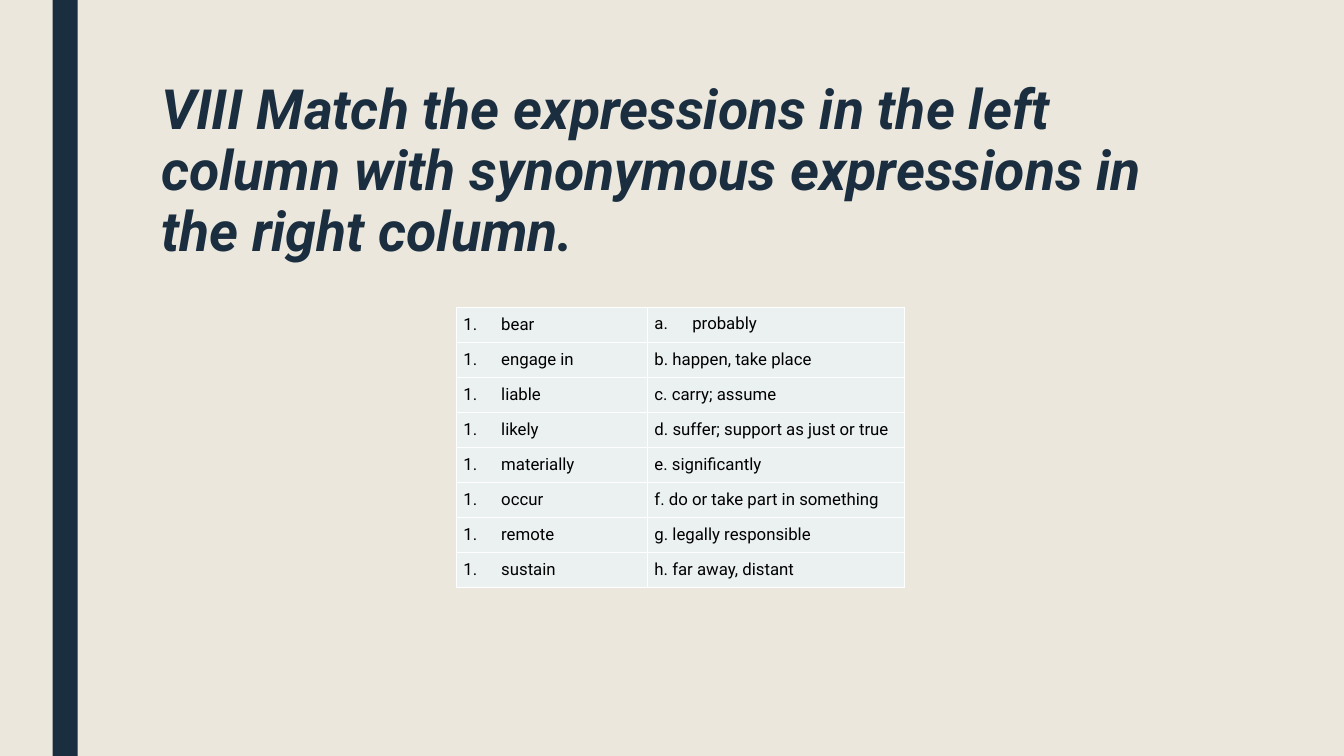
from dataclasses import dataclass

from lxml.etree import SubElement
from pptx import Presentation
from pptx.dml.color import RGBColor
from pptx.enum.shapes import MSO_SHAPE as Shape
from pptx.enum.text import MSO_ANCHOR as Anchor, PP_ALIGN as Align
from pptx.oxml import parse_xml
from pptx.oxml.ns import nsdecls, qn
from pptx.slide import Slide
from pptx.table import _Cell as Cell
from pptx.util import Pt

FONT = "Roboto"
NAVY, CREAM, PALE, WHITE, BLACK = "1A2E40", "EBE7DD", "EBF0F1", "FFFFFF", "000000"
SLIDE_WIDTH, SLIDE_HEIGHT = 960, 540
ROW_HEIGHT, CELL_MARGIN, NUMBER_INDENT = 25, 4.8, 27


@dataclass(frozen=True)
class Entry:
    text: str
    numbering: str = ""
    line_spacing: float = 1.07
    space_after: float = 0


def term(text: str) -> Entry:
    """Describe a numbered expression of the left column."""
    return Entry(text, numbering="arabicPeriod")


def synonym(text: str) -> Entry:
    """Describe a lettered expression of the right column."""
    return Entry(text, space_after=8)


MATCHES = [
    (term("bear"), Entry("probably", "alphaLcPeriod", line_spacing=1)),
    (term("engage in"), synonym("b. happen, take place")),
    (term("liable"), synonym("c. carry; assume")),
    (term("likely"), synonym("d. suffer; support as just or true")),
    (term("materially"), synonym("e. significantly")),
    (term("occur"), synonym("f. do or take part in something")),
    (term("remote"), synonym("g. legally responsible")),
    (term("sustain"), synonym("h. far away, distant")),
]


def color(value: str) -> RGBColor:
    """Turn a hex string into a colour."""
    return RGBColor.from_string(value)


def draw_side_bar(slide: Slide) -> None:
    """Draw the full-height bar on the left."""
    bar = slide.shapes.add_shape(Shape.RECTANGLE, Pt(37.5), 0, Pt(18), Pt(SLIDE_HEIGHT))
    bar.shadow.inherit = False
    bar.fill.solid()
    bar.fill.fore_color.rgb = color(NAVY)
    bar.line.fill.background()


def draw_heading(slide: Slide, text: str) -> None:
    """Write the task heading."""
    heading = slide.shapes.add_textbox(Pt(108), Pt(54), Pt(756), Pt(116.6))
    frame = heading.text_frame
    frame.word_wrap = True
    paragraph = frame.paragraphs[0]
    paragraph.text = text
    paragraph.line_spacing = 0.92
    font = paragraph.font
    font.name, font.size = FONT, Pt(39.6)
    font.bold = font.italic = True
    font.color.rgb = color(NAVY)


def draw_borders(cell: Cell) -> None:
    """Edge a cell with thin white lines."""
    properties = cell._tc.get_or_add_tcPr()
    for position, side in enumerate(("lnL", "lnR", "lnT", "lnB")):
        border = parse_xml(
            f'<a:{side} {nsdecls("a")} w="{Pt(1)}"><a:solidFill>'
            f'<a:srgbClr val="{WHITE}"/></a:solidFill></a:{side}>'
        )
        properties.insert(position, border)


def fill_cell(cell: Cell, entry: Entry) -> None:
    """Write and style one table entry."""
    cell.margin_left = cell.margin_right = Pt(CELL_MARGIN)
    cell.margin_top = cell.margin_bottom = Pt(CELL_MARGIN)
    cell.vertical_anchor = Anchor.TOP
    cell.fill.solid()
    cell.fill.fore_color.rgb = color(PALE)
    draw_borders(cell)
    paragraph = cell.text_frame.paragraphs[0]
    paragraph.text = entry.text
    paragraph.alignment = Align.JUSTIFY
    paragraph.line_spacing = entry.line_spacing
    paragraph.space_after = Pt(entry.space_after)
    if entry.numbering:
        properties = paragraph._p.get_or_add_pPr()
        properties.set("marL", str(Pt(NUMBER_INDENT)))
        properties.set("indent", str(-Pt(NUMBER_INDENT)))
        SubElement(properties, qn("a:buFont"), typeface=FONT)
        SubElement(properties, qn("a:buAutoNum"), type=entry.numbering)
    font = paragraph.font
    font.name, font.size = FONT, Pt(12)
    font.color.rgb = color(BLACK)


def draw_matches(slide: Slide) -> None:
    """Draw the table of expressions to match."""
    widths = (136.5, 183.6)
    table = slide.shapes.add_table(
        len(MATCHES), len(widths), Pt(326.2), Pt(219.5),
        Pt(sum(widths)), Pt(ROW_HEIGHT * len(MATCHES)),
    ).table
    table.first_row = table.horz_banding = False
    for column, width in zip(table.columns, widths):
        column.width = Pt(width)
    for row, match in zip(table.rows, MATCHES):
        row.height = Pt(ROW_HEIGHT)
        for cell, entry in zip(row.cells, match):
            fill_cell(cell, entry)


def main() -> None:
    """Build the matching exercise slide."""
    presentation = Presentation()
    presentation.slide_width = Pt(SLIDE_WIDTH)
    presentation.slide_height = Pt(SLIDE_HEIGHT)
    slide = presentation.slides.add_slide(presentation.slide_layouts[6])
    slide.background.fill.solid()
    slide.background.fill.fore_color.rgb = color(CREAM)
    draw_side_bar(slide)
    draw_heading(
        slide,
        "VIII Match the expressions in the left column with "
        "synonymous expressions in the right column.",
    )
    draw_matches(slide)
    presentation.save("out.pptx")


if __name__ == "__main__":
    main()
